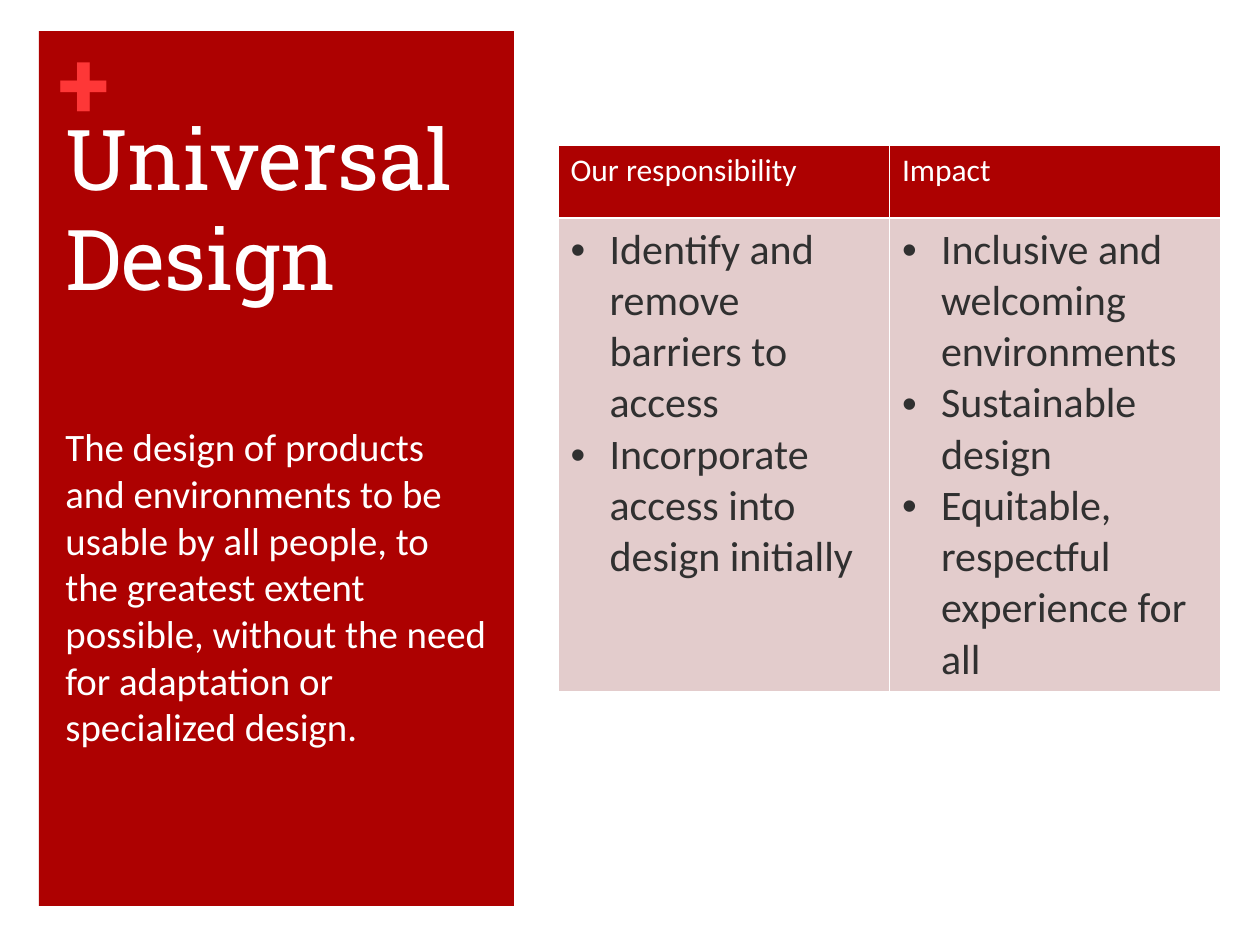
from dataclasses import dataclass

from lxml.etree import SubElement
from pptx import Presentation
from pptx.dml.color import RGBColor
from pptx.enum.shapes import MSO_SHAPE as Shape
from pptx.enum.text import MSO_ANCHOR as Anchor, MSO_AUTO_SIZE as AutoSize, PP_ALIGN as Align
from pptx.oxml import parse_xml
from pptx.oxml.ns import nsdecls, qn
from pptx.util import Pt

PX_PER_INCH = 126
EMU_PER_PX = 914400 / PX_PER_INCH
BODY_FONT, TITLE_FONT = "Calibri", "Roboto Slab"
RED, BRIGHT_RED, PINK = "AD0101", "FE3737", "E3CCCC"
WHITE, DARK = "FFFFFF", "303030"


@dataclass(frozen=True)
class Box:
    x: int
    y: int
    w: int
    h: int

    def emu(self) -> tuple[int, ...]:
        return tuple(px(v) for v in (self.x, self.y, self.w, self.h))


@dataclass(frozen=True)
class Style:
    font: str
    size: float
    color: str
    bold: bool = False


@dataclass(frozen=True)
class Column:
    heading: str
    points: tuple[str, ...]


PANEL = Box(39, 31, 475, 875)
PLUS = Box(59, 24, 57, 115)
TITLE = Box(53, 205, 449, 109)
BODY = Box(53, 417, 449, 364)
TABLE = Box(558, 145, 663, 547)
HEADER_HEIGHT = 73
BULLET_INDENT = 39

DEFINITION = (
    "The design of products and environments to be usable by all people, "
    "to the greatest extent possible, without the need for adaptation or "
    "specialized design."
)
COLUMNS = (
    Column("Our responsibility", (
        "Identify and remove barriers to access",
        "Incorporate access into design initially",
    )),
    Column("Impact", (
        "Inclusive and welcoming environments",
        "Sustainable design",
        "Equitable, respectful experience for all",
    )),
)


def px(value: float) -> int:
    return round(value * EMU_PER_PX)


def rgb(color: str) -> RGBColor:
    return RGBColor.from_string(color)


def add_run(p, text: str, style: Style) -> None:
    r = p.add_run()
    r.text = text
    r.font.name = style.font
    r.font.size = Pt(style.size)
    r.font.bold = style.bold
    r.font.color.rgb = rgb(style.color)


def add_panel(slide, box: Box, color: str) -> None:
    sp = slide.shapes.add_shape(Shape.RECTANGLE, *box.emu())
    sp.shadow.inherit = False
    sp.fill.solid()
    sp.fill.fore_color.rgb = rgb(color)
    sp.line.fill.background()


def add_text(slide, box: Box, text: str, style: Style, inset: bool = True):
    """Add a wrapping text box and return its paragraph."""
    tf = slide.shapes.add_textbox(*box.emu()).text_frame
    tf.word_wrap = True
    if not inset:
        tf.margin_left = tf.margin_top = tf.margin_right = tf.margin_bottom = 0
    p = tf.paragraphs[0]
    add_run(p, text, style)
    return p


def set_title(slide, box: Box, lines: tuple[str, ...], style: Style) -> None:
    sp = slide.shapes.title
    sp.left, sp.top, sp.width, sp.height = box.emu()
    tf = sp.text_frame
    tf.word_wrap = True
    tf.auto_size = AutoSize.NONE
    tf.vertical_anchor = Anchor.BOTTOM
    p = tf.paragraphs[0]
    p.alignment = Align.LEFT
    p.line_spacing = 1.0
    for i, line in enumerate(lines):
        if i:
            p.add_line_break()
        add_run(p, line, style)


def add_bullet(p) -> None:
    pPr = p._p.get_or_add_pPr()
    pPr.set("marL", str(px(BULLET_INDENT)))
    pPr.set("indent", str(-px(BULLET_INDENT)))
    SubElement(pPr, qn("a:buFont"), typeface="Arial")
    SubElement(pPr, qn("a:buChar"), char="•")


def fill_cell(cell, texts: tuple[str, ...], style: Style, fill: str, bullets: bool) -> None:
    cell.fill.solid()
    cell.fill.fore_color.rgb = rgb(fill)
    tcPr = cell._tc.get_or_add_tcPr()
    for i, side in enumerate(("lnL", "lnR", "lnT", "lnB")):
        tcPr.insert(i, parse_xml(
            f'<a:{side} {nsdecls("a")} w="{Pt(1)}"><a:solidFill>'
            f'<a:srgbClr val="{WHITE}"/></a:solidFill></a:{side}>'))
    tf = cell.text_frame
    for i, text in enumerate(texts):
        p = tf.add_paragraph() if i else tf.paragraphs[0]
        if bullets:
            add_bullet(p)
        add_run(p, text, style)


def add_columns_table(slide, box: Box, columns: tuple[Column, ...]) -> None:
    table = slide.shapes.add_table(2, len(columns), *box.emu()).table
    table.horz_banding = False
    table.rows[0].height = px(HEADER_HEIGHT)
    table.rows[1].height = px(box.h - HEADER_HEIGHT)
    heading = Style(BODY_FONT, 18, WHITE)
    point = Style(BODY_FONT, 24, DARK)
    for i, column in enumerate(columns):
        table.columns[i].width = px(box.w / len(columns))
        fill_cell(table.cell(0, i), (column.heading,), heading, RED, False)
        fill_cell(table.cell(1, i), column.points, point, PINK, True)


def main() -> None:
    prs = Presentation()
    prs.slide_width, prs.slide_height = px(1260), px(945)
    slide = prs.slides.add_slide(prs.slide_layouts[5])
    add_panel(slide, PANEL, RED)
    # The title placeholder comes first in the tree; bring it above the panel.
    tree = slide.shapes._spTree
    tree.append(slide.shapes.title._element)
    add_text(slide, PLUS, "+", Style(TITLE_FONT, 54, BRIGHT_RED, True), inset=False)
    set_title(slide, TITLE, ("Universal", "Design"), Style(TITLE_FONT, 48, WHITE))
    p = add_text(slide, BODY, DEFINITION, Style(BODY_FONT, 22.2, WHITE))
    p.space_before, p.space_after = Pt(7), Pt(10)
    add_columns_table(slide, TABLE, COLUMNS)
    prs.save("out.pptx")


if __name__ == "__main__":
    main()
